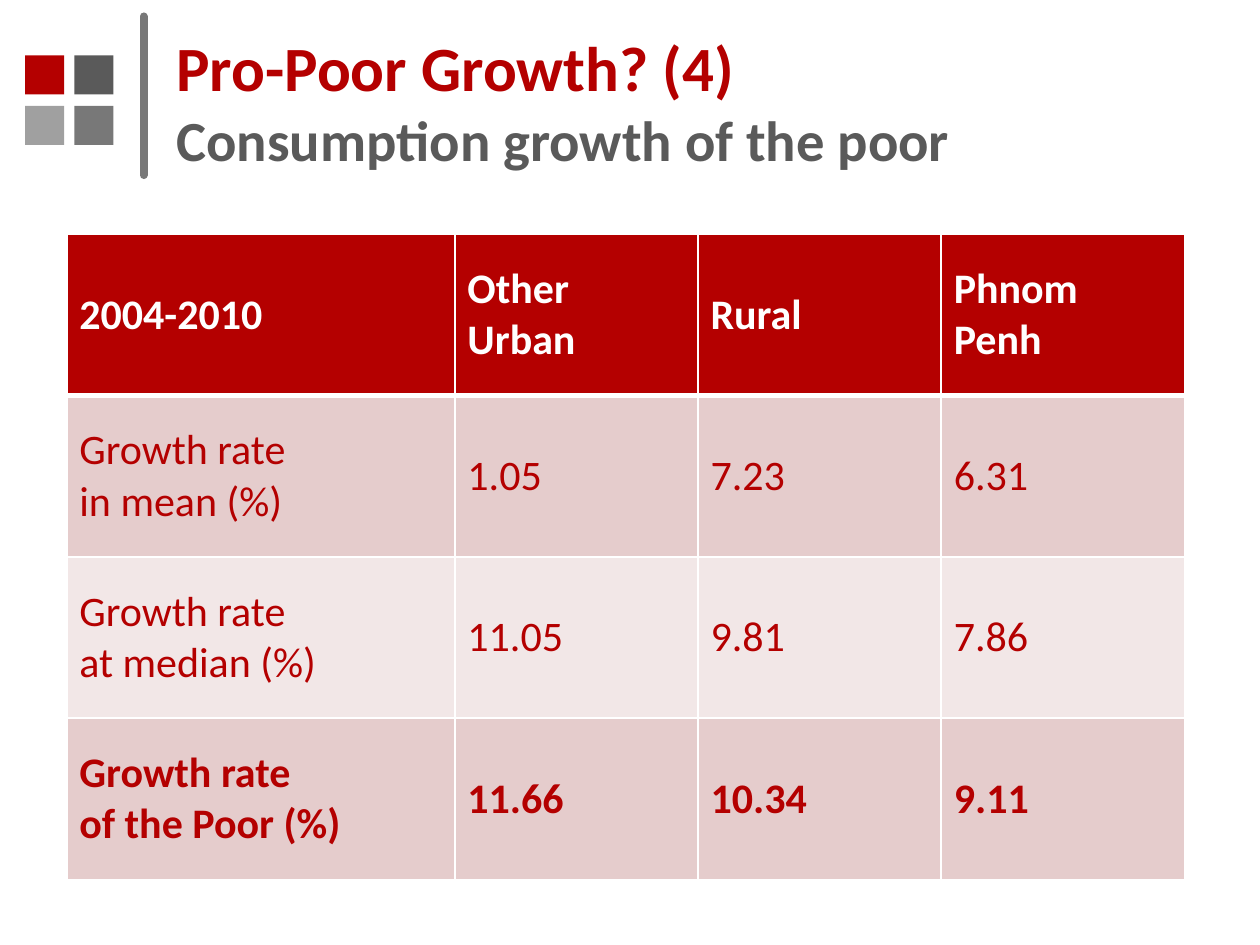
from dataclasses import dataclass

from lxml import etree
from pptx import Presentation
from pptx import util as u
from pptx.dml.color import RGBColor
from pptx.enum import shapes, text
from pptx.oxml import ns


@dataclass(frozen=True)
class Theme:
    font: str = "Calibri"
    red: str = "B40000"
    dark: str = "5A5A5A"
    mid: str = "787878"
    light: str = "A0A0A0"
    white: str = "FFFFFF"
    band_odd: str = "E5CCCC"
    band_even: str = "F2E7E7"
    title_size: float = 36
    subtitle_size: float = 32.4
    table_size: float = 24


theme = Theme()


def add_run(p, content, size, color, bold):
    r = p.add_run()
    r.text = content
    r.font.name = theme.font
    r.font.size = u.Pt(size)
    r.font.bold = bold
    r.font.color.rgb = RGBColor.from_string(color)


def add_borders(cell, bottom_width):
    tc_pr = cell._tc.get_or_add_tcPr()
    widths = {"lnL": 1, "lnR": 1, "lnT": 1, "lnB": bottom_width}
    for i, (side, width) in enumerate(widths.items()):
        ln = etree.Element(ns.qn(f"a:{side}"), w=str(u.Pt(width)))
        fill = etree.SubElement(ln, ns.qn("a:solidFill"))
        etree.SubElement(fill, ns.qn("a:srgbClr"), val=theme.white)
        tc_pr.insert(i, ln)


prs = Presentation()
prs.slide_width = u.Inches(10)
prs.slide_height = u.Inches(7.5)
s = prs.slides.add_slide(prs.slide_layouts[5])

square_colors = [[theme.red, theme.dark], [theme.light, theme.mid]]
for row, colors in enumerate(square_colors):
    for col, color in enumerate(colors):
        square = s.shapes.add_shape(
            shapes.MSO_SHAPE.RECTANGLE,
            u.Inches(0.2 + 0.39 * col), u.Inches(0.44 + 0.4 * row),
            u.Inches(0.31), u.Inches(0.31))
        square.shadow.inherit = False
        square.fill.solid()
        square.fill.fore_color.rgb = RGBColor.from_string(color)
        square.line.fill.background()

divider = s.shapes.add_connector(
    shapes.MSO_CONNECTOR.STRAIGHT,
    u.Inches(1.14), u.Inches(0.13), u.Inches(1.14), u.Inches(1.39))
divider.line.width = u.Pt(4.5)
divider.line.color.rgb = RGBColor.from_string(theme.mid)
divider.line._get_or_add_ln().set("cap", "rnd")
etree.SubElement(divider._element.spPr, ns.qn("a:effectLst"))

title = s.shapes.title
title.left, title.top = u.Inches(1.3), u.Inches(0.29)
title.width, title.height = u.Inches(7.96), u.Inches(1.02)
tf = title.text_frame
tf.word_wrap = True
tf.auto_size = text.MSO_AUTO_SIZE.NONE
tf.vertical_anchor = text.MSO_ANCHOR.MIDDLE
p = tf.paragraphs[0]
p.alignment = text.PP_ALIGN.LEFT
add_run(p, "Pro-Poor Growth? (4)", theme.title_size, theme.red, True)
p.add_line_break()
add_run(p, "Consumption growth of the poor", theme.subtitle_size, theme.dark, True)

rows = [
    ["2004-2010", "Other Urban", "Rural", "Phnom Penh"],
    ["Growth rate\nin mean (%)", "1.05", "7.23", "6.31"],
    ["Growth rate\nat median (%)", "11.05", "9.81", "7.86"],
    ["Growth rate\nof the Poor (%)", "11.66", "10.34", "9.11"],
]
row_fills = [theme.red, theme.band_odd, theme.band_even, theme.band_odd]
column_widths = [3.08, 1.93, 1.93, 1.93]
table = s.shapes.add_table(
    len(rows), len(column_widths), u.Inches(0.53), u.Inches(1.86),
    u.Inches(sum(column_widths)), u.Inches(1.28 * len(rows))).table
for column, width in zip(table.columns, column_widths):
    column.width = u.Inches(width)

for i, values in enumerate(rows):
    table.rows[i].height = u.Inches(1.28)
    is_header = i == 0
    color = theme.white if is_header else theme.red
    bold = is_header or i == len(rows) - 1
    for j, value in enumerate(values):
        cell = table.cell(i, j)
        cell.vertical_anchor = text.MSO_ANCHOR.MIDDLE
        cell.fill.solid()
        cell.fill.fore_color.rgb = RGBColor.from_string(row_fills[i])
        add_borders(cell, 3 if is_header else 1)
        tf = cell.text_frame
        for k, line in enumerate(value.split("\n")):
            p = tf.add_paragraph() if k else tf.paragraphs[0]
            add_run(p, line, theme.table_size, color, bold)

prs.save("out.pptx")
